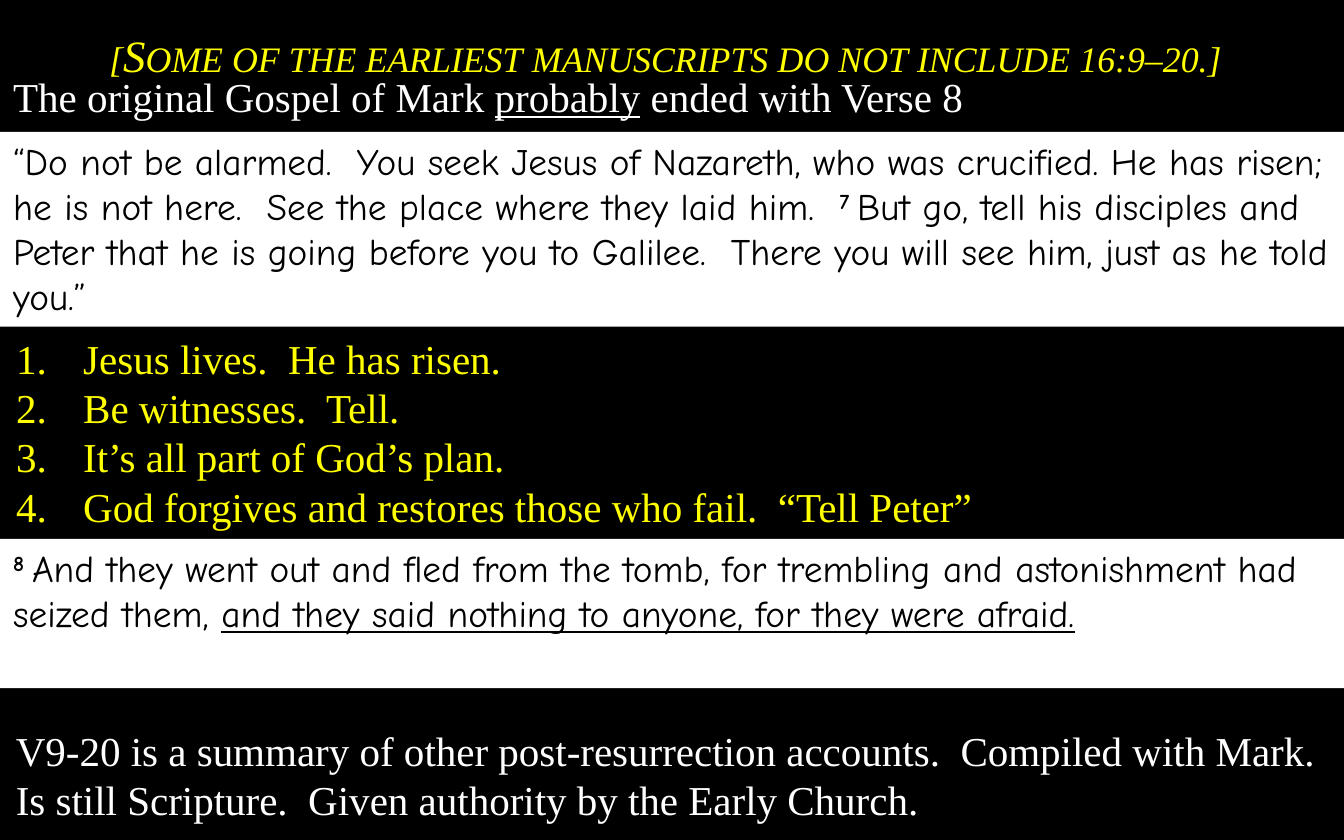
from pptx import Presentation
from pptx.dml.color import RGBColor
from pptx.enum.shapes import MSO_SHAPE
from pptx.enum.text import MSO_ANCHOR, MSO_AUTO_SIZE, PP_ALIGN
from pptx.oxml.ns import qn
from pptx.util import Pt
from lxml.etree import SubElement

BLACK = RGBColor(0x00, 0x00, 0x00)
WHITE = RGBColor(0xFF, 0xFF, 0xFF)
YELLOW = RGBColor(0xFF, 0xFF, 0x00)
SERIF = "Times New Roman"
HAND = "Comic Neue"
WIDTH, HEIGHT = 720, 450


class VerseSlide:
    """Holds the text style and the slide being filled."""

    def __init__(self, presentation):
        self.note_size = 22
        self.verse_size = 20
        self.slide = presentation.slides.add_slide(presentation.slide_layouts[1])
        background = self.slide.background.fill
        background.solid()
        background.fore_color.rgb = BLACK

    def place(self, shape, left, top, width, height):
        shape.left, shape.top = Pt(left), Pt(top)
        shape.width, shape.height = Pt(width), Pt(height)
        self.frame(shape)

    def frame(self, shape):
        text_frame = shape.text_frame
        text_frame.word_wrap = True
        text_frame.auto_size = MSO_AUTO_SIZE.NONE
        text_frame.vertical_anchor = MSO_ANCHOR.TOP

    def style(self, run, name, size, color):
        run.font.name = name
        run.font.size = Pt(size)
        run.font.color.rgb = color

    def write_runs(self, paragraph, pieces, name, size, color):
        """Write (text, mark) pieces; a mark is "", "underline" or "number"."""
        paragraph.alignment = PP_ALIGN.LEFT
        for text, mark in pieces:
            run = paragraph.add_run()
            run.text = text
            self.style(run, name, size, color)
            if mark == "underline":
                run.font.underline = True
            elif mark == "number":
                run.font.bold = True
                run.font._element.set("baseline", "30000")

    def title(self, text, left, top, width, height):
        shape = self.slide.shapes.title
        self.place(shape, left, top, width, height)
        shape.text_frame.text = text
        paragraph = shape.text_frame.paragraphs[0]
        paragraph.alignment = PP_ALIGN.CENTER
        paragraph.line_spacing = 1.15
        run = paragraph.runs[0]
        self.style(run, SERIF, 24, YELLOW)
        run.font.italic = True
        run.font._element.set("cap", "small")

    def numbered_list(self, items, left, top, width, height):
        shape = self.slide.placeholders[1]
        self.place(shape, left, top, width, height)
        shape.text_frame.text = "\n".join(items)
        for paragraph in shape.text_frame.paragraphs:
            properties = paragraph._p.get_or_add_pPr()
            properties.set("marL", str(Pt(36)))
            properties.set("indent", str(Pt(-36)))
            paragraph.space_before = Pt(0)
            SubElement(properties, qn("a:buFont"), typeface="+mj-lt")
            SubElement(properties, qn("a:buAutoNum"), type="arabicPeriod")
            self.style(paragraph.runs[0], SERIF, self.note_size, YELLOW)

    def note(self, lines, left, top, width, height):
        shape = self.slide.shapes.add_textbox(Pt(left), Pt(top), Pt(width), Pt(height))
        self.frame(shape)
        for index, pieces in enumerate(lines):
            text_frame = shape.text_frame
            paragraph = text_frame.add_paragraph() if index else text_frame.paragraphs[0]
            self.write_runs(paragraph, pieces, SERIF, self.note_size, WHITE)

    def verse_band(self, pieces, top, height):
        shape = self.slide.shapes.add_shape(
            MSO_SHAPE.RECTANGLE, 0, Pt(top), Pt(WIDTH), Pt(height))
        shape.shadow.inherit = False
        shape.fill.solid()
        shape.fill.fore_color.rgb = WHITE
        shape.line.fill.background()
        self.frame(shape)
        self.write_runs(shape.text_frame.paragraphs[0], pieces,
                        HAND, self.verse_size, BLACK)


def main():
    presentation = Presentation()
    presentation.slide_width, presentation.slide_height = Pt(WIDTH), Pt(HEIGHT)
    page = VerseSlide(presentation)

    # Heading and opening remark
    page.title("[Some of the earliest manuscripts do not include 16:9–20.]",
               0, 6.7, 713, 39)
    page.note([[("The original Gospel of Mark ", ""), ("probably", "underline"),
                (" ended with Verse 8", "")]], 0, 34.6, WIDTH, 34)

    # Verses 6 and 7
    page.verse_band([
        ("“Do not be alarmed.  You seek Jesus of Nazareth, who was crucified. "
         "He has risen; he is not here.  See the place where they laid him.  ", ""),
        ("7\u00a0".replace("\u00a0", " "), "number"),
        ("But go, tell his disciples and Peter that he is going before you to "
         "Galilee.  There you will see him, just as he told you.”", ""),
    ], 70.6, 104.4)

    # Lessons
    page.numbered_list([
        "Jesus lives.  He has risen.",
        "Be witnesses.  Tell.",
        "It’s all part of God’s plan.",
        "God forgives and restores those who fail.  “Tell Peter”",
    ], 1.4, 175, 564, 114)

    # Verse 8
    page.verse_band([
        ("8 ", "number"),
        ("And they went out and fled from the tomb, for trembling and "
         "astonishment had seized them, ", ""),
        ("and they said nothing to anyone, for they were afraid.", "underline"),
    ], 288.7, 80)

    # Closing remark
    page.note([
        [("V9-20 is a summary of other post-resurrection accounts.  "
          "Compiled with Mark.", "")],
        [("Is still Scripture.  Given authority by the Early Church.", "")],
    ], 1.4, 385.2, 716.4, 60.5)

    presentation.save("out.pptx")


if __name__ == "__main__":
    main()
